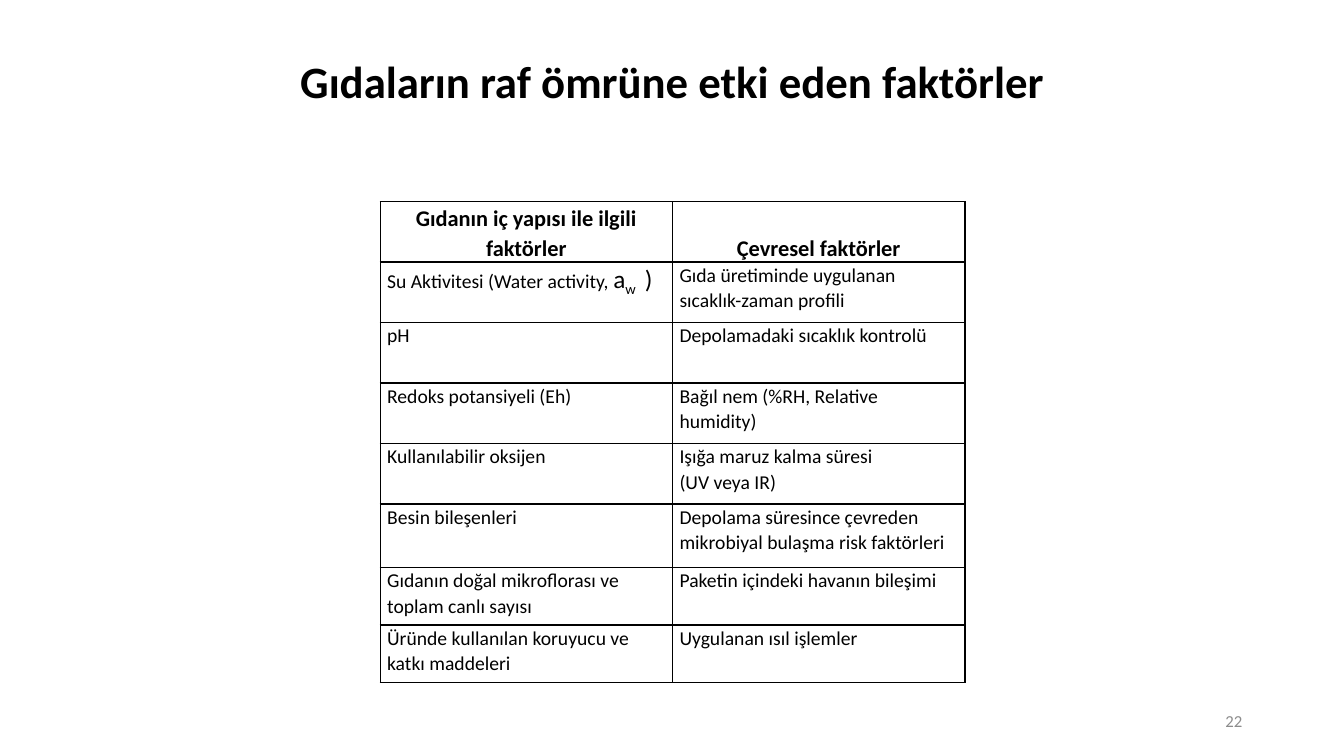
from lxml import etree
from pptx import Presentation
from pptx import util as u
from pptx.dml.color import RGBColor
from pptx.enum import text as t
from pptx.oxml import ns

HEADS = ["Gıdanın iç yapısı ile ilgili faktörler", "Çevresel faktörler"]
WATER = [("Su Aktivitesi (Water activity, ", 14, 0), ("a", 18, 0),
         ("w ", 18, -25000), (" )", 18, 0)]
FACTORS = [
    (WATER, "Gıda üretiminde uygulanan sıcaklık-zaman profili"),
    ("pH", "Depolamadaki sıcaklık kontrolü"),
    ("Redoks potansiyeli (Eh)", "Bağıl nem (%RH, Relative humidity)"),
    ("Kullanılabilir oksijen", "Işığa maruz kalma süresi\n(UV veya IR)"),
    ("Besin bileşenleri",
     "Depolama süresince çevreden mikrobiyal bulaşma risk faktörleri"),
    ("Gıdanın doğal mikroflorası ve toplam canlı sayısı",
     "Paketin içindeki havanın bileşimi"),
    ("Üründe kullanılan koruyucu ve katkı maddeleri", "Uygulanan ısıl işlemler"),
]
HEIGHTS = [0.6] * 5 + [0.63, 0.57, 0.57]


def color(code):
    """Turn a hex string into a colour."""
    return RGBColor.from_string(code)


def style(run, size, code="000000", bold=False):
    """Set the font of one run."""
    font = run.font
    font.name, font.size, font.bold = "Calibri", u.Pt(size), bold
    font.color.rgb = color(code)


def label(slide, box, words, size, align, code="000000", bold=False, lead=None):
    """Place a line of text, centred vertically in its box."""
    frame = slide.shapes.add_textbox(*map(u.Inches, box)).text_frame
    frame.word_wrap = True
    frame.vertical_anchor = t.MSO_ANCHOR.MIDDLE
    frame.text = words
    para = frame.paragraphs[0]
    para.alignment, para.line_spacing = align, lead
    style(para.runs[0], size, code, bold)


def border(cell, code, width):
    """Draw a line on all four sides of a cell."""
    props = cell._tc.get_or_add_tcPr()
    for side in ("lnL", "lnR", "lnT", "lnB"):
        line = etree.SubElement(props, ns.qn("a:" + side), w=str(u.Pt(width)))
        fill = etree.SubElement(line, ns.qn("a:solidFill"))
        etree.SubElement(fill, ns.qn("a:srgbClr"), val=code)


def fill_cell(cell, words, head):
    """Write and format one cell of the table."""
    border(cell, "000000", 1)
    cell.fill.background()
    cell.margin_left = cell.margin_right = u.Inches(0.07)
    cell.margin_top = cell.margin_bottom = 0
    cell.vertical_anchor = t.MSO_ANCHOR.BOTTOM if head else t.MSO_ANCHOR.TOP
    frame = cell.text_frame
    if isinstance(words, str):
        frame.text = words
        for para in frame.paragraphs:
            style(para.runs[0], 16 if head else 14, bold=head)
    else:
        for part, size, base in words:
            run = frame.paragraphs[0].add_run()
            run.text = part
            style(run, size)
            if base:
                run._r.get_or_add_rPr().set("baseline", str(base))
    for para in frame.paragraphs:
        para.line_spacing = 1.07
        para.alignment = t.PP_ALIGN.CENTER if head else t.PP_ALIGN.LEFT


def factor_table(slide, box):
    """Build the two-column table of factors in its box."""
    rows = [HEADS, *FACTORS]
    table = slide.shapes.add_table(len(rows), 2, *map(u.Inches, box)).table
    table.horz_banding = table.first_row = False
    for col in table.columns:
        col.width = u.Inches(box[2] / 2)
    for i, (row, high) in enumerate(zip(rows, HEIGHTS)):
        table.rows[i].height = u.Inches(high)
        for j, words in enumerate(row):
            fill_cell(table.cell(i, j), words, i == 0)


def main():
    """Build and save the slide."""
    deck = Presentation()
    deck.slide_width, deck.slide_height = u.Inches(13.33), u.Inches(7.5)
    slide = deck.slides.add_slide(deck.slide_layouts[6])
    label(slide, (0.92, 0.4, 11.5, 0.87), "Gıdaların raf ömrüne etki eden faktörler",
          32, t.PP_ALIGN.CENTER, bold=True, lead=0.9)
    factor_table(slide, (3.77, 2, 5.8, sum(HEIGHTS)))
    label(slide, (9.42, 6.95, 3, 0.4), "22", 12, t.PP_ALIGN.RIGHT, "8C8C8C")
    deck.save("out.pptx")


if __name__ == "__main__":
    main()
